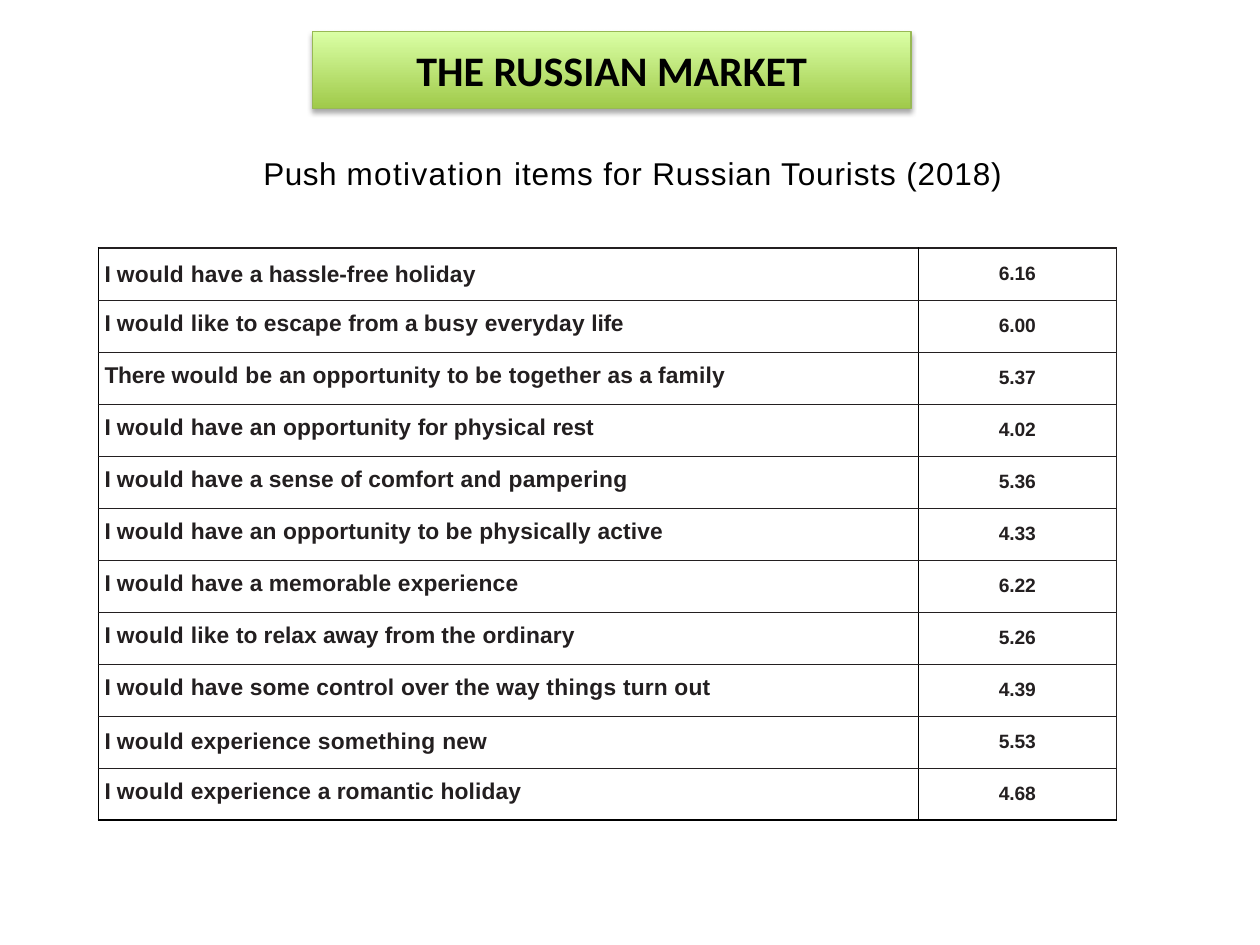
from dataclasses import dataclass
from itertools import groupby

from lxml.etree import SubElement
from pptx import Presentation
from pptx.dml.color import RGBColor
from pptx.enum.shapes import MSO_SHAPE
from pptx.enum.text import MSO_ANCHOR, MSO_AUTO_SIZE, PP_ALIGN
from pptx.oxml.ns import qn
from pptx.util import Inches, Pt


@dataclass(frozen=True)
class Theme:
    black: str = "000000"
    ink: str = "231F20"
    banner_low: str = "A0CA4A"
    banner_high: str = "DAFFA5"
    banner_line: str = "98B955"
    heading_font: str = "Calibri"
    body_font: str = "Arial"
    heading_size: float = 24
    subtitle_size: float = 18
    item_size: float = 13
    score_size: float = 11


ITEMS = [
    ("I would have a hassle-free holiday", "6.16"),
    ("I would like to escape from a busy everyday life", "6.00"),
    ("There would be an opportunity to be together as a family", "5.37"),
    ("I would have an opportunity for physical rest", "4.02"),
    ("I would have a sense of comfort and pampering", "5.36"),
    ("I would have an opportunity to be physically active", "4.33"),
    ("I would have a memorable experience", "6.22"),
    ("I would like to relax away from the ordinary", "5.26"),
    ("I would have some control over the way things turn out", "4.39"),
    ("I would experience something new", "5.53"),
    ("I would experience a romantic holiday", "4.68"),
]
LOOSE_ROWS = {0, 9}
TRACKING = {
    -0.1: "I There for life rest",
    0: "a to from of as over relax away hassle-free",
    0.2: "would be busy and pampering things something",
}
WORD_TRACKING = {word: spc for spc, words in TRACKING.items() for word in words.split()}


def tracked_runs(sentence):
    words = sentence.split()
    groups = [(spc, " ".join(group)) for spc, group in
              groupby(words, lambda word: WORD_TRACKING.get(word, 0.1))]
    last = len(groups) - 1
    return [(text if i == last else text + " ", spc)
            for i, (spc, text) in enumerate(groups)]


class SlideBuilder:
    def __init__(self, slide, theme):
        self.slide = slide
        self.theme = theme

    def add_runs(self, p, runs, font, size, color, bold=False):
        for text, spacing in runs:
            r = p.add_run()
            r.text = text
            r.font.name = font
            r.font.size = Pt(size)
            r.font.bold = bold
            r.font.color.rgb = RGBColor.from_string(color)
            if spacing:
                r.font._element.set("spc", str(round(spacing * 100)))

    def banner(self, text, left, top, width, height):
        t = self.theme
        sp = self.slide.shapes.add_shape(
            MSO_SHAPE.RECTANGLE, Inches(left), Inches(top), Inches(width), Inches(height))
        sp.fill.gradient()
        sp.fill.gradient_angle = 90
        for stop, color in zip(sp.fill.gradient_stops, (t.banner_low, t.banner_high)):
            stop.color.rgb = RGBColor.from_string(color)
        sp.line.color.rgb = RGBColor.from_string(t.banner_line)
        sp.line.width = Pt(0.75)
        self.soft_shadow(sp)
        tf = sp.text_frame
        tf.vertical_anchor = MSO_ANCHOR.MIDDLE
        p = tf.paragraphs[0]
        p.alignment = PP_ALIGN.CENTER
        self.add_runs(p, [(text, 0)], t.heading_font, t.heading_size, t.black, True)

    def soft_shadow(self, sp):
        sp.shadow.inherit = False
        effects = sp._element.spPr.find(qn("a:effectLst"))
        shadow = SubElement(effects, qn("a:outerShdw"), blurRad=str(Pt(3.1)),
                            dist=str(Pt(1.8)), dir="5400000", rotWithShape="0")
        color = SubElement(shadow, qn("a:srgbClr"), val=self.theme.black)
        SubElement(color, qn("a:alpha"), val="35000")

    def subtitle(self, runs, left, top, width, height):
        t = self.theme
        box = self.slide.shapes.add_textbox(
            Inches(left), Inches(top), Inches(width), Inches(height))
        tf = box.text_frame
        tf.word_wrap = False
        tf.auto_size = MSO_AUTO_SIZE.SHAPE_TO_FIT_TEXT
        tf.margin_left = tf.margin_right = Inches(0.07)
        tf.margin_top = tf.margin_bottom = Inches(0.04)
        self.add_runs(tf.paragraphs[0], runs, t.body_font, t.subtitle_size, t.black)

    def border(self, cell, side, color, width):
        ln = SubElement(cell._tc.get_or_add_tcPr(), qn(f"a:ln{side}"), w=str(Pt(width)))
        fill = SubElement(ln, qn("a:solidFill"))
        SubElement(fill, qn("a:srgbClr"), val=color)

    def table_cell(self, cell, runs, size, borders):
        t = self.theme
        cell.margin_left = cell.margin_right = 0
        cell.margin_top = cell.margin_bottom = 0
        cell.vertical_anchor = MSO_ANCHOR.MIDDLE
        for side, (color, width) in borders.items():
            self.border(cell, side, color, width)
        cell.fill.background()
        p = cell.text_frame.paragraphs[0]
        p.space_before = Pt(6)
        self.add_runs(p, runs, t.body_font, size, t.ink, True)
        return p

    def score_table(self, items, left, top, widths, height):
        t = self.theme
        table = self.slide.shapes.add_table(
            len(items), len(widths), Inches(left), Inches(top),
            Inches(sum(widths)), Inches(height)).table
        table.first_row = table.horz_banding = False
        for column, width in zip(table.columns, widths):
            column.width = Inches(width)
        heavy, thin = (t.black, 1), (t.ink, 0.5)
        last = len(items) - 1
        for i, (item, score) in enumerate(items):
            rules = {"T": (t.ink, 1) if i == 0 else thin,
                     "B": heavy if i == last else thin}
            p = self.table_cell(table.cell(i, 0), tracked_runs(item), t.item_size,
                                {"L": heavy, "R": heavy, **rules})
            p._p.get_or_add_pPr().set("marL", str(Inches(0.05)))
            if i not in LOOSE_ROWS:
                p.line_spacing = 0.67
            p = self.table_cell(table.cell(i, 1), [(score, -0.1)], t.score_size,
                                {"L": heavy, "R": thin, **rules})
            p.alignment = PP_ALIGN.CENTER


def main():
    prs = Presentation()
    prs.slide_width, prs.slide_height = Inches(10), Inches(7.5)
    s = SlideBuilder(prs.slides.add_slide(prs.slide_layouts[6]), Theme())
    s.score_table(ITEMS, 0.78, 1.97, (6.51, 1.57), 4.54)
    s.subtitle([("Push ", 0.3), ("motivation ", 0.8),
                ("items for Russian Tourists (2018)", 0.5)], 2.02, 1.18, 6.16, 0.37)
    s.banner("THE RUSSIAN MARKET", 2.48, 0.25, 4.75, 0.61)
    prs.save("out.pptx")


if __name__ == "__main__":
    main()
